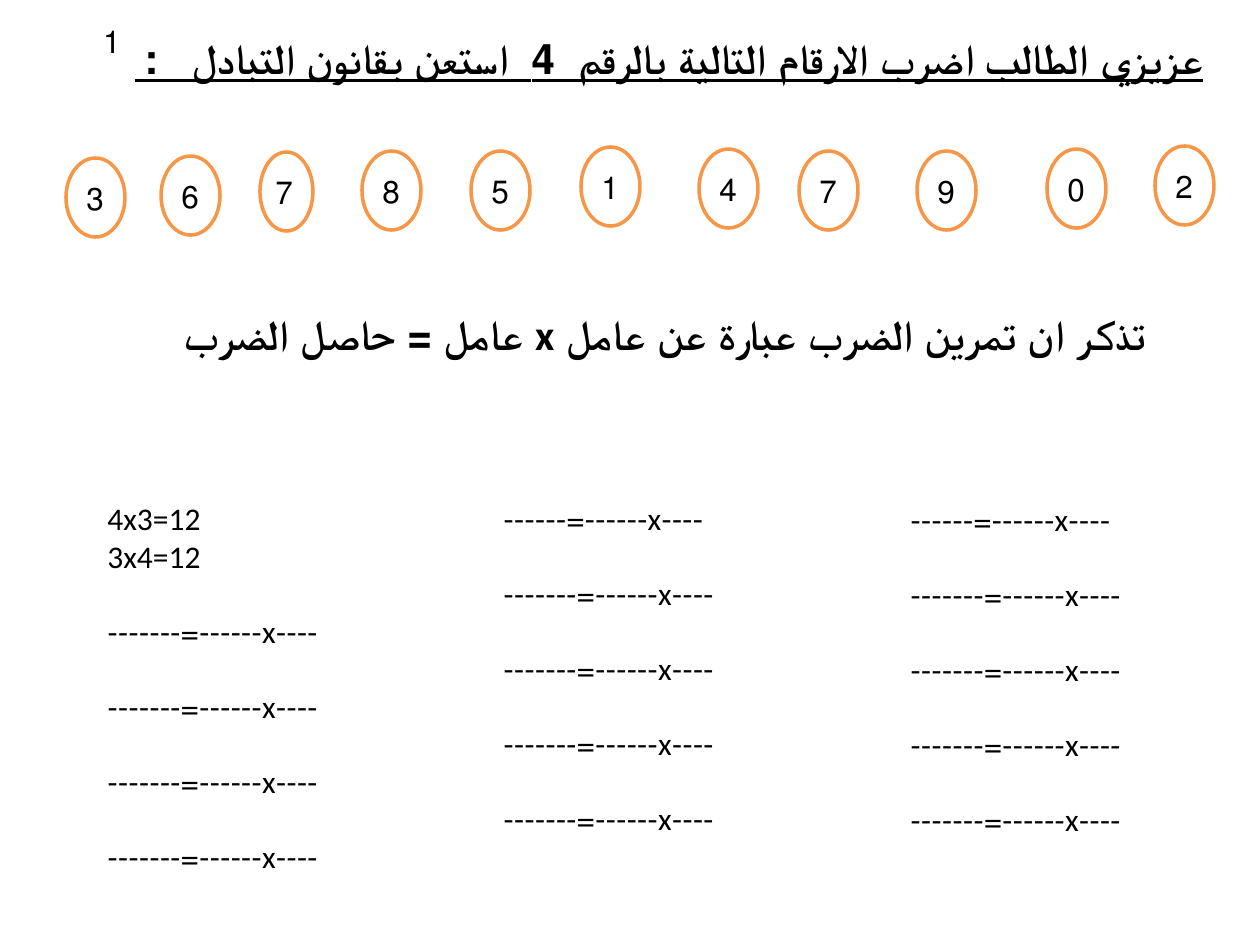
from dataclasses import dataclass

from lxml import etree
from pptx import Presentation
from pptx.dml.color import RGBColor
from pptx.enum import shapes, text
from pptx.oxml import ns
from pptx.util import Emu, Pt

SCALE = 914400 / 126
FONT = "Calibri"
INK, PAPER, RING = "000000", "FFFFFF", "F79646"
LEFT, MID, RIGHT = text.PP_ALIGN.LEFT, text.PP_ALIGN.CENTER, text.PP_ALIGN.RIGHT
BLANK = "----x------=-------"
START = " ----x------=------"


@dataclass
class Box:
    x: int
    y: int
    w: int
    h: int


@dataclass
class Ball:
    digit: str
    x: int
    y: int
    w: int = 59


@dataclass
class Column:
    box: Box
    head: list[str]


BALLS = [
    Ball("6", 161, 156), Ball("3", 66, 158), Ball("7", 260, 152, 53),
    Ball("8", 362, 151), Ball("5", 471, 151), Ball("1", 581, 147),
    Ball("4", 699, 149), Ball("7", 799, 151), Ball("9", 917, 151),
    Ball("0", 1047, 149), Ball("2", 1155, 146),
]
COLUMNS = [
    Column(Box(95, 493, 297, 394), [" 4x3=12", "3x4=12"]),
    Column(Box(491, 493, 297, 357), [START]),
    Column(Box(898, 494, 297, 357), [START]),
]


def px(n: int) -> Emu:
    return Emu(round(n * SCALE))


def place(box: Box) -> list[Emu]:
    return [px(n) for n in (box.x, box.y, box.w, box.h)]


def paint(tint: str) -> RGBColor:
    return RGBColor.from_string(tint)


def write(para, words: str, *, size: int = 18, align=LEFT, bold: bool = False,
          under: bool = False, gap: float | None = None) -> None:
    para.alignment = align
    para._p.get_or_add_pPr().set("rtl", "1")
    if gap is not None:
        para.space_before = Pt(gap)
    run = para.add_run()
    run.text = words
    font = run.font
    font.name, font.size = FONT, Pt(size)
    font.bold, font.underline = bold, under
    font.color.rgb = paint(INK)


def add_box(slide, box: Box):
    frame = slide.shapes.add_textbox(*place(box)).text_frame
    frame.word_wrap = True
    frame.auto_size = text.MSO_AUTO_SIZE.SHAPE_TO_FIT_TEXT
    return frame


def add_head(slide, box: Box, words: str) -> None:
    slide.shapes.title.element.getparent().remove(slide.shapes.title.element)
    body = slide.placeholders[1]
    body.left, body.top, body.width, body.height = place(box)
    para = body.text_frame.paragraphs[0]
    write(para, words, size=24, align=RIGHT, bold=True, under=True)
    props = para._p.get_or_add_pPr()
    props.set("marL", "0")
    props.set("indent", "0")
    etree.SubElement(props, ns.qn("a:buNone"))


def add_ball(slide, ball: Ball) -> None:
    oval = slide.shapes.add_shape(
        shapes.MSO_SHAPE.OVAL, *place(Box(ball.x, ball.y, ball.w, 79)))
    oval.shadow.inherit = False
    oval.fill.solid()
    oval.fill.fore_color.rgb = paint(PAPER)
    oval.line.color.rgb = paint(RING)
    oval.line.width = Pt(2)
    frame = oval.text_frame
    frame.vertical_anchor = text.MSO_ANCHOR.MIDDLE
    write(frame.paragraphs[0], ball.digit, align=MID)


def add_column(slide, col: Column) -> None:
    frame = add_box(slide, col.box)
    for i, line in enumerate(col.head + [BLANK] * 4):
        para = frame.add_paragraph() if i else frame.paragraphs[0]
        write(para, line, gap=21.3 if i >= len(col.head) else 0)


def main() -> None:
    deck = Presentation()
    deck.slide_width, deck.slide_height = px(1260), px(945)
    slide = deck.slides.add_slide(deck.slide_layouts[1])
    add_head(slide, Box(63, 26, 1153, 818),
             "عزيزي الطالب اضرب الارقام التالية بالرقم  4  استعن بقانون التبادل   : ")
    for ball in BALLS:
        add_ball(slide, ball)
    for col in COLUMNS:
        add_column(slide, col)
    hint = add_box(slide, Box(134, 302, 1024, 63))
    write(hint.paragraphs[0],
          "تذكر ان تمرين الضرب عبارة عن عامل x عامل = حاصل الضرب ",
          size=24, align=RIGHT, bold=True)
    mark = add_box(slide, Box(95, 16, 38, 50))
    write(mark.paragraphs[0], "1", align=RIGHT)
    deck.save("out.pptx")


if __name__ == "__main__":
    main()
